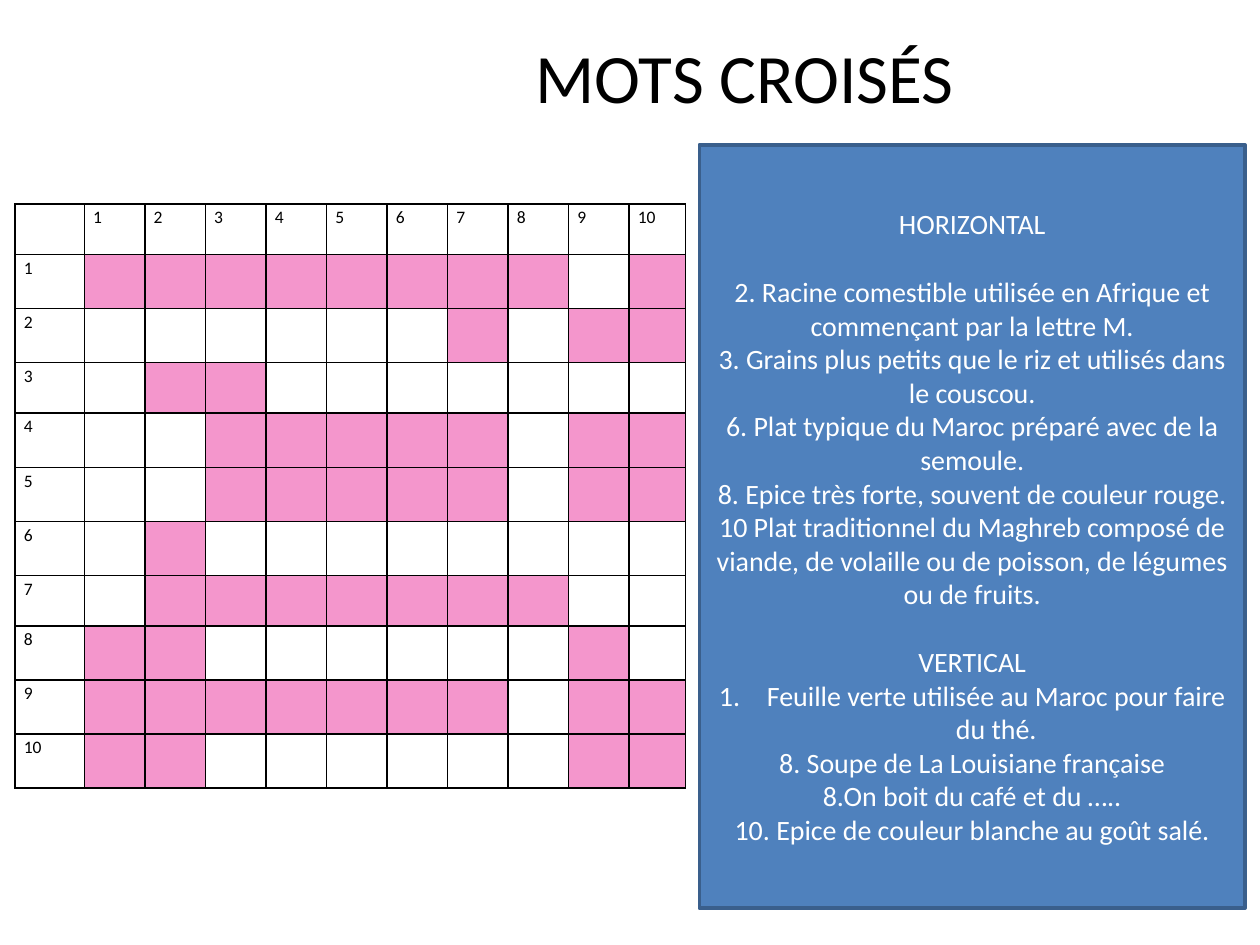
import lxml.etree
import pptx
import pptx.dml.color
import pptx.enum.shapes
import pptx.enum.text
import pptx.oxml.ns
import pptx.util

Cm = pptx.util.Cm
Pt = pptx.util.Pt
CENTER = pptx.enum.text.PP_ALIGN.CENTER
MIDDLE = pptx.enum.text.MSO_ANCHOR.MIDDLE

COLORS = {
    "ink": "000000",
    "open": "FFFFFF",
    "blocked": "F496CC",
    "panel": "4F81BD",
    "panel_edge": "3A5F8C",
    "clue": "FFFFFF",
}
FONT = "Calibri"

CROSSWORD = [
    "########.#",
    "......#.##",
    ".##.......",
    "..#####.##",
    "..#####.##",
    ".#........",
    ".#######..",
    "##......#.",
    "#######.##",
    "##......##",
]
COLUMN_WIDTHS = [1.4] + [1.22] * 9 + [1.14]
SHORT_ROWS = {0, 3, 7}

HORIZONTAL_CLUES = [
    "2. Racine comestible utilisée en Afrique et commençant par la lettre M.",
    "3. Grains plus petits que le riz et utilisés dans le couscou.",
    "6. Plat typique du Maroc préparé avec de la semoule.",
    "8. Epice très forte, souvent de couleur rouge.",
    "10 Plat traditionnel du Maghreb composé de viande, de volaille ou de poisson, "
    "de légumes ou de fruits.",
]
NUMBERED_CLUE = "Feuille verte utilisée au Maroc pour faire du thé."
VERTICAL_CLUES = [
    NUMBERED_CLUE,
    "8. Soupe de La Louisiane française",
    "8.On boit du café et du …..",
    "10. Epice de couleur blanche au goût salé.",
]


def rgb(name):
    return pptx.dml.color.RGBColor.from_string(COLORS[name])


def style_font(font, size, color):
    font.name = FONT
    font.size = Pt(size)
    font.color.rgb = rgb(color)


def add_heading(slide):
    heading = slide.shapes.title
    heading.left, heading.top = Cm(5.89), Cm(0.76)
    heading.width, heading.height = Cm(18.24), Cm(1.55)
    frame = heading.text_frame
    frame.text = "MOTS CROISÉS"
    frame.vertical_anchor = MIDDLE
    frame.paragraphs[0].alignment = CENTER
    style_font(frame.paragraphs[0].runs[0].font, 39.6, "ink")


def number_paragraph(paragraph):
    properties = paragraph._p.get_or_add_pPr()
    properties.set("marL", str(Cm(0.97)))
    properties.set("indent", str(-Cm(0.97)))
    numbering = lxml.etree.SubElement(properties, pptx.oxml.ns.qn("a:buAutoNum"))
    numbering.set("type", "arabicPeriod")


def add_clues(slide):
    panel = slide.shapes.add_shape(
        pptx.enum.shapes.MSO_SHAPE.RECTANGLE, Cm(14.1), Cm(2.92), Cm(11), Cm(15.39)
    )
    panel.shadow.inherit = False
    panel.fill.solid()
    panel.fill.fore_color.rgb = rgb("panel")
    panel.line.color.rgb = rgb("panel_edge")
    panel.line.width = Pt(2)
    frame = panel.text_frame
    frame.word_wrap = True
    frame.vertical_anchor = MIDDLE
    lines = ["HORIZONTAL", *HORIZONTAL_CLUES, "VERTICAL", *VERTICAL_CLUES]
    frame.text = "\n".join(lines)
    for paragraph in frame.paragraphs:
        paragraph.alignment = CENTER
        style_font(paragraph.runs[0].font, 16, "clue")
        if paragraph.text in (HORIZONTAL_CLUES[0], "VERTICAL"):
            paragraph.space_before = Pt(19.5)
        if paragraph.text == NUMBERED_CLUE:
            number_paragraph(paragraph)


def add_borders(cell):
    properties = cell._tc.get_or_add_tcPr()
    for side in ("a:lnL", "a:lnR", "a:lnT", "a:lnB"):
        edge = lxml.etree.SubElement(properties, pptx.oxml.ns.qn(side), w=str(Pt(1)))
        fill = lxml.etree.SubElement(edge, pptx.oxml.ns.qn("a:solidFill"))
        lxml.etree.SubElement(fill, pptx.oxml.ns.qn("a:srgbClr"), val=COLORS["ink"])


def format_cell(cell, label, color):
    add_borders(cell)
    cell.fill.solid()
    cell.fill.fore_color.rgb = rgb(color)
    cell.margin_left = cell.margin_right = Cm(0.18)
    cell.margin_top = cell.margin_bottom = 0
    cell.text = label
    paragraph = cell.text_frame.paragraphs[0]
    paragraph.line_spacing = 1.15
    style_font(paragraph.font, 10, "ink")
    for run in paragraph.runs:
        style_font(run.font, 10, "ink")


def add_crossword(slide):
    size = len(CROSSWORD) + 1
    heights = [1.02 if row in SHORT_ROWS else 1.09 for row in range(size)]
    grid = slide.shapes.add_table(
        size, size, Cm(0.3), Cm(4.11), Cm(sum(COLUMN_WIDTHS)), Cm(sum(heights))
    ).table
    grid.first_row = grid.horz_banding = False
    for column, width in zip(grid.columns, COLUMN_WIDTHS):
        column.width = Cm(width)
    for row, height in zip(grid.rows, heights):
        row.height = Cm(height)
    for row in range(size):
        for column in range(size):
            is_header = row == 0 or column == 0
            label = str(row + column) if is_header and row + column else ""
            blocked = not is_header and CROSSWORD[row - 1][column - 1] == "#"
            format_cell(grid.cell(row, column), label, "blocked" if blocked else "open")


def main():
    presentation = pptx.Presentation()
    presentation.slide_width = Cm(25.4)
    presentation.slide_height = Cm(19.05)
    slide = presentation.slides.add_slide(presentation.slide_layouts[5])
    add_heading(slide)
    add_clues(slide)
    add_crossword(slide)
    presentation.save("out.pptx")


if __name__ == "__main__":
    main()
